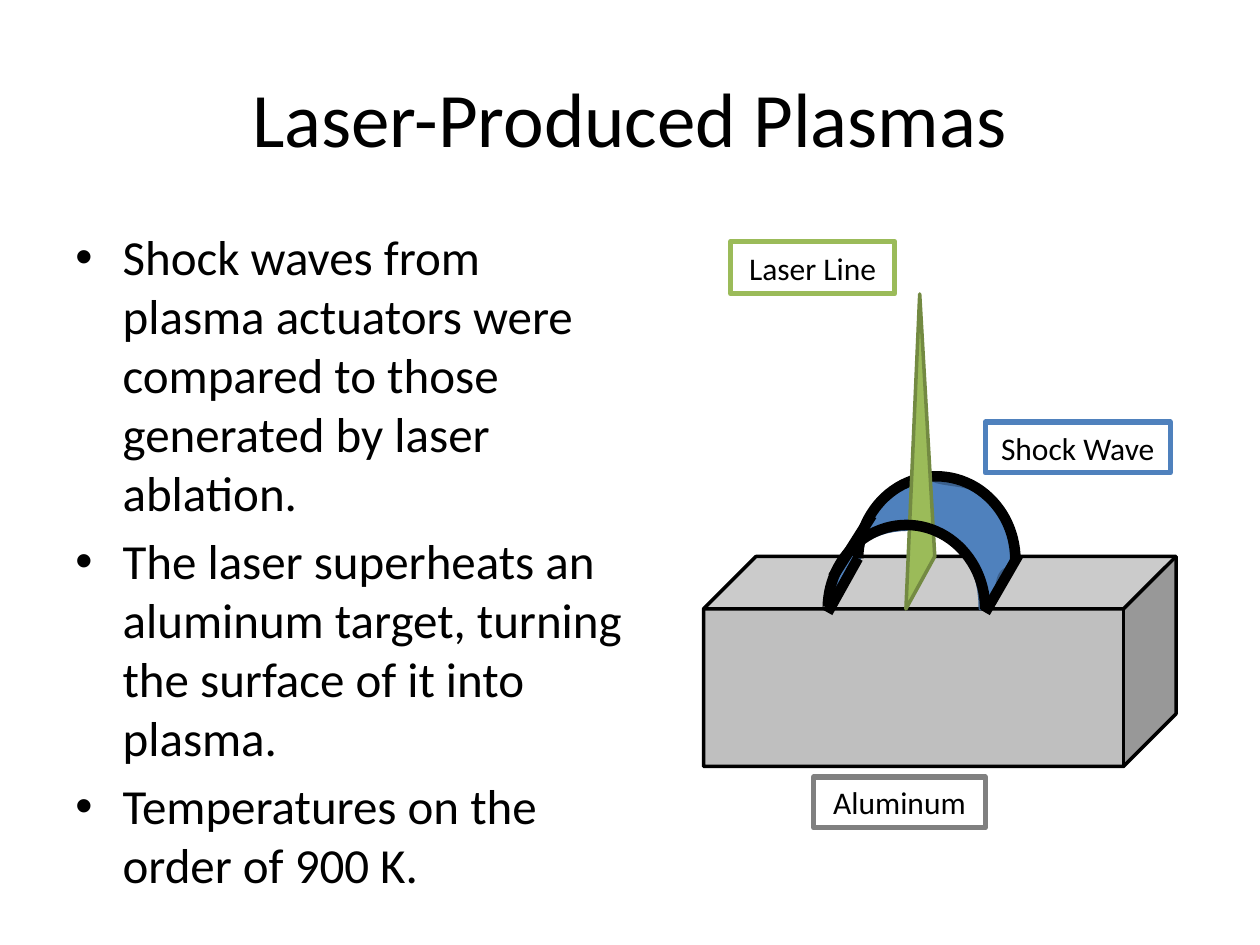
from pptx import Presentation
from pptx.dml.color import RGBColor
from pptx.enum.shapes import MSO_CONNECTOR, MSO_SHAPE
from pptx.enum.text import MSO_ANCHOR, PP_ALIGN
from pptx.oxml.ns import qn
from pptx.util import Pt
from lxml.etree import SubElement


def rgb(hex_color):
    return RGBColor.from_string(hex_color)


def bezier(p0, p1, p2, p3, steps=16):
    """Points along a cubic curve, without its start."""
    points = []
    for i in range(1, steps + 1):
        t = i / steps
        u = 1 - t
        weights = (u**3, 3 * u**2 * t, 3 * u * t**2, t**3)
        points.append(tuple(sum(w * p[axis] for w, p in zip(weights, (p0, p1, p2, p3)))
                            for axis in (0, 1)))
    return points


class Deck:
    FONT = "Calibri"
    BLACK = "000000"

    def __init__(self, prs):
        self.s = prs.slides.add_slide(prs.slide_layouts[6])

    def style(self, sp, fill, line, width):
        sp.shadow.inherit = False
        if fill:
            sp.fill.solid()
            sp.fill.fore_color.rgb = rgb(fill)
        else:
            sp.fill.background()
        sp.line.color.rgb = rgb(line)
        sp.line.width = Pt(width)

    def run(self, p, text, size):
        r = p.add_run()
        r.text = text
        r.font.name = self.FONT
        r.font.size = Pt(size)
        r.font.color.rgb = rgb(self.BLACK)

    def text_box(self, box):
        tf = self.s.shapes.add_textbox(*map(Pt, box)).text_frame
        tf.word_wrap = True
        return tf

    def title(self, box, text):
        tf = self.text_box(box)
        tf.vertical_anchor = MSO_ANCHOR.MIDDLE
        p = tf.paragraphs[0]
        p.alignment = PP_ALIGN.CENTER
        self.run(p, text, 44)

    def bullets(self, box, items, size=28, indent=27):
        tf = self.text_box(box)
        for i, item in enumerate(items):
            p = tf.add_paragraph() if i else tf.paragraphs[0]
            p.space_before = Pt(0.2 * size if i else 0)
            pPr = p._p.get_or_add_pPr()
            pPr.set("marL", str(Pt(indent)))
            pPr.set("indent", str(-Pt(indent)))
            SubElement(pPr, qn("a:buFont"), typeface="Arial")
            SubElement(pPr, qn("a:buChar"), char="•")
            self.run(p, item, size)

    def shape(self, kind, box, fill, line, width):
        sp = self.s.shapes.add_shape(kind, *map(Pt, box))
        self.style(sp, fill, line, width)
        return sp

    def arc(self, left, top):
        sp = self.shape(MSO_SHAPE.ARC, (left, top, 90, 96), None, self.BLACK, 6)
        sp.adjustments[0] = 108.929
        sp.adjustments[1] = 0

    def line(self, start, end):
        cx = self.s.shapes.add_connector(MSO_CONNECTOR.STRAIGHT, *map(Pt, start + end))
        cx.line.color.rgb = rgb(self.BLACK)
        cx.line.width = Pt(6)
        SubElement(cx._element.spPr, qn("a:effectLst"))

    def polygon(self, points, fill, line):
        points = [(Pt(x), Pt(y)) for x, y in points]
        fb = self.s.shapes.build_freeform(*points[0])
        fb.add_line_segments(points[1:], close=True)
        self.style(fb.convert_to_shape(), fill, line, 2)

    def label(self, box, text, color):
        sp = self.shape(MSO_SHAPE.RECTANGLE, box, "FFFFFF", color, 3)
        tf = sp.text_frame
        tf.word_wrap = False
        tf.vertical_anchor = MSO_ANCHOR.MIDDLE
        p = tf.paragraphs[0]
        p.alignment = PP_ALIGN.CENTER
        self.run(p, text, 18)


def main():
    prs = Presentation()
    prs.slide_width, prs.slide_height = Pt(720), Pt(540)
    d = Deck(prs)

    # Aluminum block
    d.shape(MSO_SHAPE.CUBE, (402, 318, 270, 120), "BFBFBF", "000000", 2)

    # Title
    d.title((36, 21.6, 648, 90), "Laser-Produced Plasmas")

    # Shock wave surface: each curve is two control points and an end
    wave = [(490.3, 321.8)]
    for curve in (
        ((493.9, 311), (494.6, 295.9), (501.8, 288)),
        ((509, 280.1), (520.6, 267.8), (532.8, 274.3)),
        ((545.8, 280.1), (578.2, 270), (578.2, 324.7)),
        ((564.5, 324.7), (574.6, 347.8), (560.2, 347.8)),
        ((560.2, 316.8), (542.2, 302.4), (519.1, 302.4)),
        ((495.4, 302.4), (475.9, 316.8), (475.9, 347.8)),
    ):
        wave += bezier(wave[-1], *curve)
    d.polygon(wave, "4F81BD", "3A5F8C")

    # Bullets
    d.bullets((36, 126, 330, 356.4), (
        "Shock waves from plasma actuators were compared to those generated by laser ablation.",
        "The laser superheats an aluminum target, turning the surface of it into plasma.",
        "Temperatures on the order of 900 K.",
    ))

    # Shock wave outline, with the laser sheet between the two arcs
    d.line((563, 350), (581.8, 317.5))
    d.line((473, 350), (490.3, 319))
    d.arc(490.3, 272.2)
    d.polygon(((517.7, 348), (525.6, 168), (534.2, 318)), "9BBB59", "738A42")
    d.arc(473, 300)
    d.line((475.9, 329.8), (498.2, 294.5))

    # Labels
    d.label((417.6, 138, 93.6, 30), "Laser Line", "9BBB59")
    d.label((563, 241.2, 105.8, 29), "Shock Wave", "4F81BD")
    d.label((465, 444, 98, 29), "Aluminum", "808080")

    prs.save("out.pptx")


if __name__ == "__main__":
    main()
